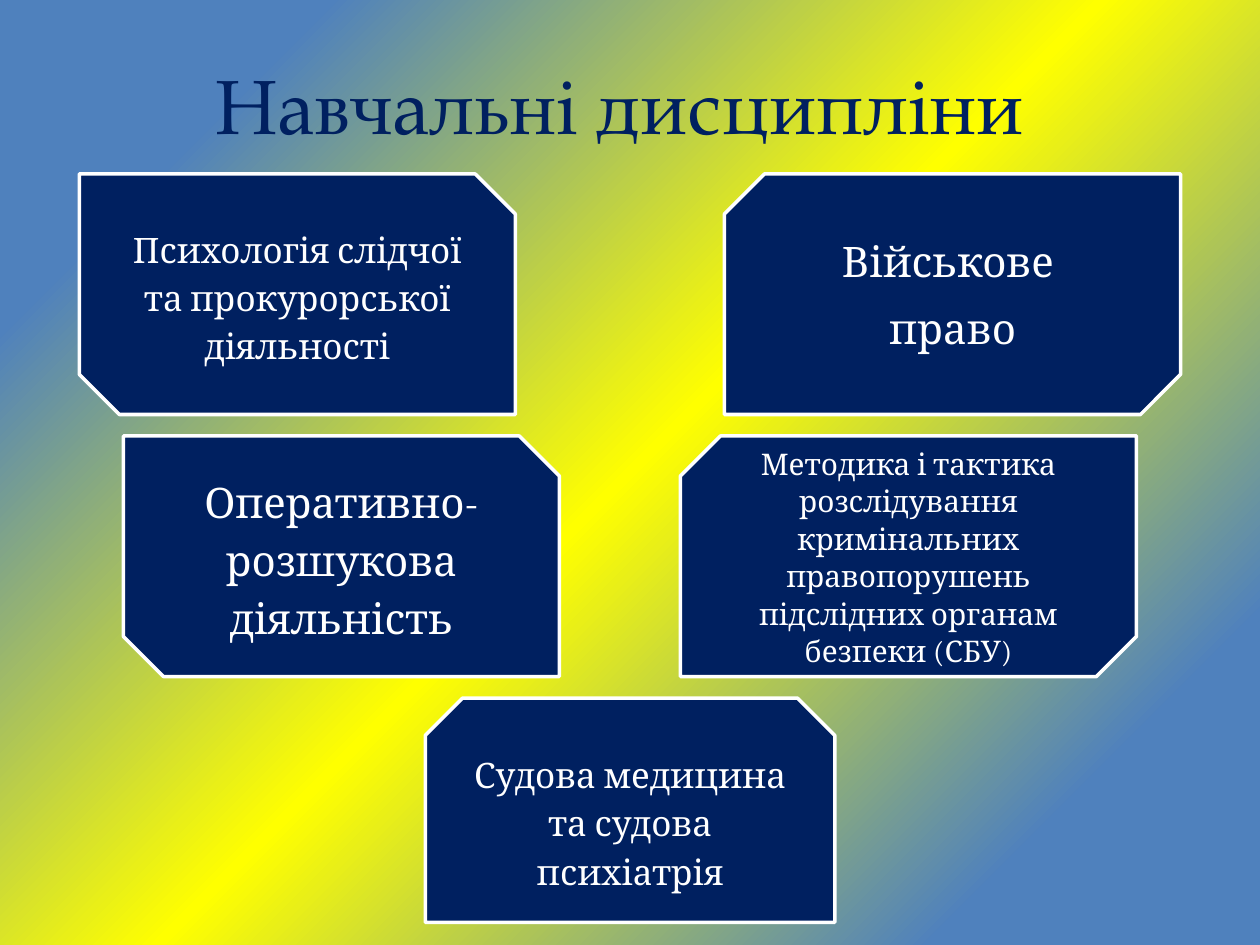
from copy import deepcopy

from pptx import Presentation
from pptx import util as u
from pptx.dml.color import RGBColor
from pptx.enum import shapes, text

NAVY = RGBColor(0x00, 0x20, 0x60)
WHITE = RGBColor(0xFF, 0xFF, 0xFF)
BLUE = RGBColor(0x4F, 0x81, 0xBD)
YELLOW = RGBColor(0xFF, 0xFF, 0x00)

prs = Presentation()
prs.slide_width, prs.slide_height = u.Inches(10), u.Inches(7.5)
s = prs.slides.add_slide(prs.slide_layouts[0])

# Diagonal blue-yellow-blue background
fill = s.background.fill
fill.gradient()
fill.gradient_angle = 315
first_stop = fill.gradient_stops[0]._gs
first_stop.addnext(deepcopy(first_stop))
for stop, (position, color) in zip(
        fill.gradient_stops, [(0.15, BLUE), (0.5, YELLOW), (0.85, BLUE)]):
    stop.position = position
    stop.color.rgb = color

# Title
subtitle = s.placeholders[1].element
subtitle.getparent().remove(subtitle)
title = s.shapes.title
title.left, title.top = u.Inches(1.1), u.Inches(0.34)
title.width, title.height = u.Inches(7.8), u.Inches(0.97)
tf = title.text_frame
tf.text = "Навчальні дисципліни "
tf.vertical_anchor = text.MSO_ANCHOR.MIDDLE
p = tf.paragraphs[0]
p.alignment = text.PP_ALIGN.CENTER
font = p.runs[0].font
font.size, font.name, font.color.rgb = u.Pt(44), "TeX Gyre Pagella", NAVY

# Disciplines: rows of equal pitch, each row set in further from the slide's sides
DIAGONAL = shapes.MSO_SHAPE.SNIP_2_DIAG_RECTANGLE
SAME_SIDE = shapes.MSO_SHAPE.SNIP_2_SAME_RECTANGLE
TOP, PITCH = 1.38, 2.08
LEFT_W, RIGHT_W, BOTTOM_W = 3.46, 3.62, 3.25
INSETS = [0.63, 0.98]

# row, left, width, height, outline, mirrored, line spacing, size, text
disciplines = [
    (0, INSETS[0], LEFT_W, 1.91, DIAGONAL, False, 1.15, 20,
     "Психологія слідчої та прокурорської діяльності"),
    (0, 10 - INSETS[0] - RIGHT_W, RIGHT_W, 1.91, DIAGONAL, True, 1.0, 24,
     "Військове \nправо"),
    (1, INSETS[1], LEFT_W, 1.91, DIAGONAL, False, 1.15, 24,
     "Оперативно-розшукова діяльність"),
    (1, 10 - INSETS[1] - RIGHT_W, RIGHT_W, 1.91, DIAGONAL, True, 1.05, 17,
     "Методика і тактика розслідування кримінальних правопорушень "
     "підслідних органам безпеки (СБУ)"),
    (2, (10 - BOTTOM_W) / 2, BOTTOM_W, 1.78, SAME_SIDE, False, 1.15, 20,
     "Судова медицина та судова психіатрія"),
]
for row, left, width, height, outline, mirrored, spacing, size, words in disciplines:
    sp = s.shapes.add_shape(outline, u.Inches(left), u.Inches(TOP + row * PITCH),
                            u.Inches(width), u.Inches(height))
    sp.shadow.inherit = False
    sp.fill.solid()
    sp.fill.fore_color.rgb = NAVY
    sp.line.color.rgb = WHITE
    sp.line.width = u.Pt(2)
    if mirrored:
        sp.element.spPr.xfrm.set("flipH", "1")
    tf = sp.text_frame
    tf.text = words
    tf.word_wrap = True
    tf.vertical_anchor = text.MSO_ANCHOR.MIDDLE
    tf.margin_top = tf.margin_bottom = u.Inches(0.05)
    for p in tf.paragraphs:
        p.alignment = text.PP_ALIGN.CENTER
        p.line_spacing = spacing
        p.space_after = u.Pt(10) if len(tf.paragraphs) > 1 else u.Pt(0)
        font = p.runs[0].font
        font.size, font.name, font.color.rgb = u.Pt(size), "Cambria", WHITE

prs.save("out.pptx")
